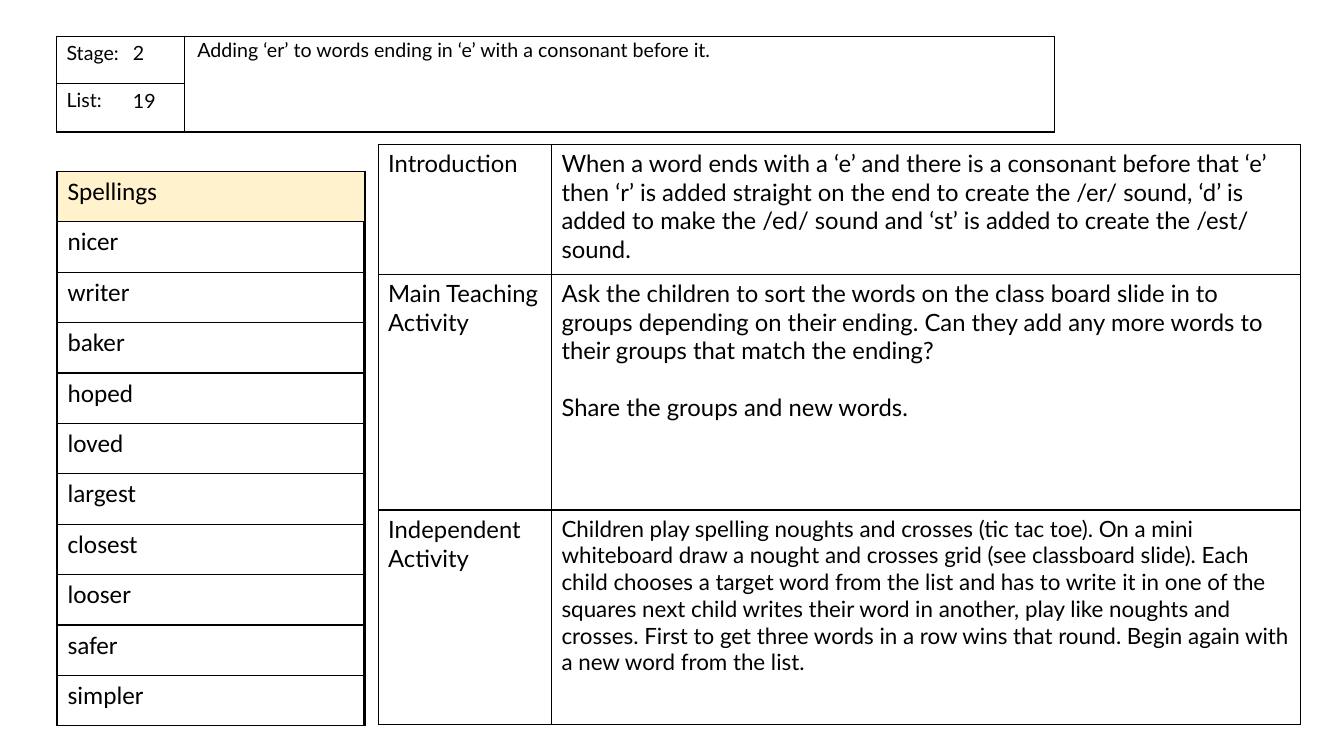
from lxml import etree
from pptx import Presentation
from pptx import util as u
from pptx.dml.color import RGBColor
from pptx.enum import shapes, text
from pptx.oxml import ns

PX = 9144  # 100 px to the inch
BLACK, CREAM, WHITE = "000000", "FFF2CC", "FFFFFF"


def style(para, font, size):
    para.font.name = font
    para.font.size = u.Pt(size)
    para.font.color.rgb = RGBColor.from_string(BLACK)


def add_grid(left, top, widths, heights, rows, font, size):
    """Add a black-ruled table without fills; a newline in a cell starts a paragraph."""
    frame = page.shapes.add_table(len(heights), len(widths), left * PX, top * PX,
                                  sum(widths) * PX, sum(heights) * PX)
    table = frame.table
    table.first_row = table.horz_banding = False
    for column, width in zip(table.columns, widths):
        column.width = width * PX
    for row, height, words in zip(table.rows, heights, rows):
        row.height = height * PX
        for cell, wording in zip(row.cells, words):
            cell.text_frame.text = wording
            for para in cell.text_frame.paragraphs:
                style(para, font, size)
            properties = cell._tc.get_or_add_tcPr()
            for side in ("lnL", "lnR", "lnT", "lnB"):
                line = etree.SubElement(properties, ns.qn("a:" + side), w=str(u.Pt(1)))
                fill = etree.SubElement(line, ns.qn("a:solidFill"))
                etree.SubElement(fill, ns.qn("a:srgbClr"), val=BLACK)
            cell.fill.background()
    return table


deck = Presentation()
deck.slide_width, deck.slide_height = 1333 * PX, 750 * PX
page = deck.slides.add_slide(deck.slide_layouts[6])

# White panel behind everything
panel = page.shapes.add_shape(shapes.MSO_SHAPE.RECTANGLE, 17 * PX, 15 * PX, 1300 * PX, 722 * PX)
panel.shadow.inherit = False
panel.fill.solid()
panel.fill.fore_color.rgb = RGBColor.from_string(WHITE)
panel.line.color.rgb = RGBColor.from_string(WHITE)
panel.line.width = u.Pt(1)
color = panel.fill._xPr.find(ns.qn("a:solidFill"))[0]
etree.SubElement(color, ns.qn("a:alpha"), val="90000")

# Stage, list and spelling rule
header = add_grid(56, 36, [127, 863], [47, 48], [["Stage:", ""], ["List:", ""]], "Lato", 14)
header.cell(0, 1).merge(header.cell(1, 1))

# Spelling list: the outer rules thicken the edges of the word table
spellings = ["Spellings", "nicer", "writer", "baker", "hoped", "loved", "largest",
             "closest", "looser", "safer", "simpler"]
heights = [50] * len(spellings)
add_grid(56, 170, [305], heights, [[""] for word in spellings], "Calibri", 18)
word_list = add_grid(57, 170, [305], heights, [[word] for word in spellings], "Calibri", 18)
heading = word_list.cell(0, 0)
heading.fill.solid()
heading.fill.fore_color.rgb = RGBColor.from_string(CREAM)

rule = "Adding ‘er’ to words ending in ‘e’ with a consonant before it."
for wording, left, top, width, height in [
    ("2", 122, 38, 47, 40),
    ("19", 122, 86, 47, 40),
    (rule, 186, 35, 860, 95),
]:
    box = page.shapes.add_textbox(left * PX, top * PX, width * PX, height * PX)
    box.text_frame.word_wrap = True
    box.text_frame.vertical_anchor = text.MSO_ANCHOR.TOP
    box.text_frame.text = wording
    para = box.text_frame.paragraphs[0]
    para.line_spacing = 0.9
    style(para, "Lato", 14)

# Lesson plan
lesson = [
    ["Introduction",
     "When a word ends with a ‘e’ and there is a consonant before that ‘e’ then ‘r’ is "
     "added straight on the end to create the /er/ sound, ‘d’ is added to make the /ed/ "
     "sound and ‘st’ is added to create the /est/ sound."],
    ["Main Teaching Activity",
     "Ask the children to sort the words on the class board slide in to groups depending "
     "on their ending. Can they add any more words to their groups that match the ending?\n"
     "Share the groups and new words."],
    ["Independent Activity",
     "Children play spelling noughts and crosses (tic tac toe). On a mini whiteboard draw "
     "a nought and crosses grid (see classboard slide). Each child chooses a target word "
     "from the list and has to write it in one of the squares next child writes their word "
     "in another, play like noughts and crosses. First to get three words in a row wins "
     "that round. Begin again with a new word from the list."],
]
plan = add_grid(375, 143, [172, 743], [129, 234, 213], lesson, "Lato", 17)
plan.cell(1, 1).text_frame.paragraphs[1].space_before = u.Pt(20)
plan.cell(2, 1).text_frame.paragraphs[0].font.size = u.Pt(16)

deck.save("out.pptx")
